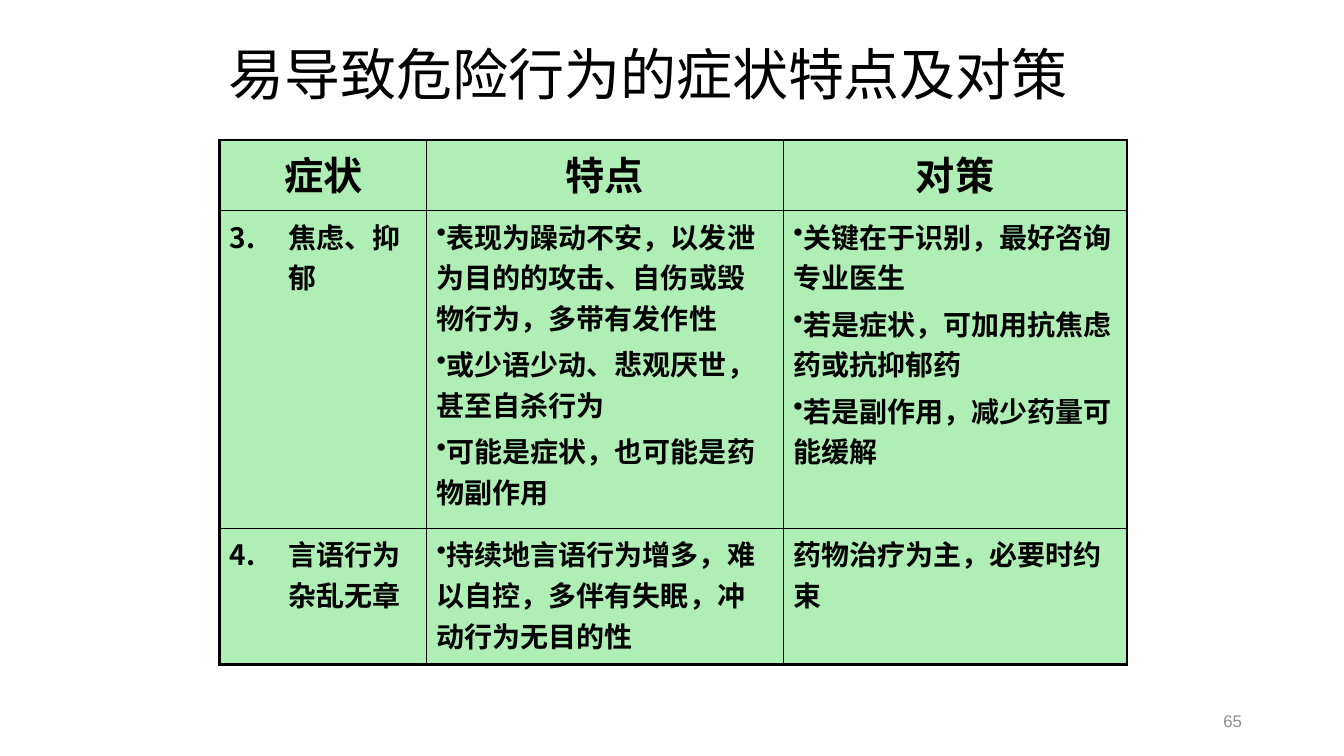
import pptx
import pptx.util
import pptx.dml.color
import pptx.enum.text
import pptx.oxml.ns
from lxml import etree

Cm, Pt = pptx.util.Cm, pptx.util.Pt
PP_ALIGN = pptx.enum.text.PP_ALIGN
ANCHOR = pptx.enum.text.MSO_ANCHOR
qn = pptx.oxml.ns.qn

COLORS = {"text": "000000", "cell": "AFEFB5", "border": "000000", "number": "8C8C8C"}
COLUMNS = [5.21, 8.99, 8.66]
ROWS = [1.78, 8, 3.43]
HEADERS = ["症状", "特点", "对策"]
SYMPTOMS = [
    (3, "焦虑、抑郁",
     ["表现为躁动不安，以发泄为目的的攻击、自伤或毁物行为，多带有发作性",
      "或少语少动、悲观厌世，甚至自杀行为",
      "可能是症状，也可能是药物副作用"],
     ["关键在于识别，最好咨询专业医生",
      "若是症状，可加用抗焦虑药或抗抑郁药",
      "若是副作用，减少药量可能缓解"]),
    (4, "言语行为杂乱无章",
     ["持续地言语行为增多，难以自控，多伴有失眠，冲动行为无目的性"],
     ["药物治疗为主，必要时约束"]),
]


def rgb(name):
    return pptx.dml.color.RGBColor.from_string(COLORS[name])


def add_run(p, text, size, font="Arial", color="text", bold=False):
    r = p.add_run()
    r.text = text
    r.font.size = Pt(size)
    r.font.name = font
    r.font.bold = bold
    r.font.color.rgb = rgb(color)


def set_bullet(p, tag, indent=0, **attrs):
    pPr = p._p.get_or_add_pPr()
    pPr.set("marL", str(Cm(indent)))
    pPr.set("indent", str(-Cm(indent)))
    etree.SubElement(pPr, qn("a:" + tag), attrs)


def set_borders(cell, widths):
    tcPr = cell._tc.get_or_add_tcPr()
    for side, width in widths.items():
        ln = etree.SubElement(tcPr, qn("a:ln" + side), w=str(Pt(width)))
        fill = etree.SubElement(ln, qn("a:solidFill"))
        etree.SubElement(fill, qn("a:srgbClr"), val=COLORS["border"])


def fill_cell(cell, texts, size, align=PP_ALIGN.LEFT, start=None, bulleted=False):
    tf = cell.text_frame
    for i, text in enumerate(texts):
        p = tf.add_paragraph() if i else tf.paragraphs[0]
        p.alignment = align
        p.space_before = Pt(size * 0.2)
        if start:
            set_bullet(p, "buAutoNum", 1.48, type="arabicPeriod", startAt=str(start))
        elif bulleted:
            set_bullet(p, "buChar", char="•")
        add_run(p, text, size, bold=True)


def add_title(s, left, top, width, height):
    sp = s.shapes.title
    sp.left, sp.top, sp.width, sp.height = Cm(left), Cm(top), Cm(width), Cm(height)
    tf = sp.text_frame
    tf.auto_size = pptx.enum.text.MSO_AUTO_SIZE.NONE
    tf.vertical_anchor = ANCHOR.MIDDLE
    p = tf.paragraphs[0]
    p.alignment = PP_ALIGN.LEFT
    p.line_spacing = 0.9
    add_run(p, "易导致危险行为的症状特点及对策", 40, "Calibri")


def add_symptom_table(s, left, top):
    table = s.shapes.add_table(len(ROWS), len(COLUMNS), Cm(left), Cm(top),
                               Cm(sum(COLUMNS)), Cm(sum(ROWS))).table
    table.horz_banding = False
    for col, width in zip(table.columns, COLUMNS):
        col.width = Cm(width)
    for row, height in zip(table.rows, ROWS):
        row.height = Cm(height)
    last_row, last_col = len(ROWS) - 1, len(COLUMNS) - 1
    for i in range(len(ROWS)):
        for j in range(len(COLUMNS)):
            cell = table.cell(i, j)
            outer = {"L": j == 0, "R": j == last_col, "T": i == 0, "B": i == last_row}
            set_borders(cell, {side: 2.25 if edge else 1 for side, edge in outer.items()})
            cell.fill.solid()
            cell.fill.fore_color.rgb = rgb("cell")
    for j, header in enumerate(HEADERS):
        fill_cell(table.cell(0, j), [header], 28, PP_ALIGN.CENTER)
    for i, (number, symptom, features, measures) in enumerate(SYMPTOMS, 1):
        fill_cell(table.cell(i, 0), [symptom], 20, start=number)
        fill_cell(table.cell(i, 1), features, 20, bulleted=True)
        fill_cell(table.cell(i, 2), measures, 20, bulleted=len(measures) > 1)


def add_page_number(s, left, top, width, height):
    tf = s.shapes.add_textbox(Cm(left), Cm(top), Cm(width), Cm(height)).text_frame
    tf.word_wrap = True
    tf.vertical_anchor = ANCHOR.MIDDLE
    p = tf.paragraphs[0]
    p.alignment = PP_ALIGN.RIGHT
    add_run(p, "65", 12, color="number")


def main():
    prs = pptx.Presentation()
    prs.slide_width, prs.slide_height = Cm(33.87), Cm(19.05)
    s = prs.slides.add_slide(prs.slide_layouts[5])
    add_title(s, 5.51, 0.76, 22.86, 2.36)
    add_symptom_table(s, 5.54, 3.53)
    add_page_number(s, 23.93, 17.65, 7.62, 1.02)
    prs.save("out.pptx")


if __name__ == "__main__":
    main()
